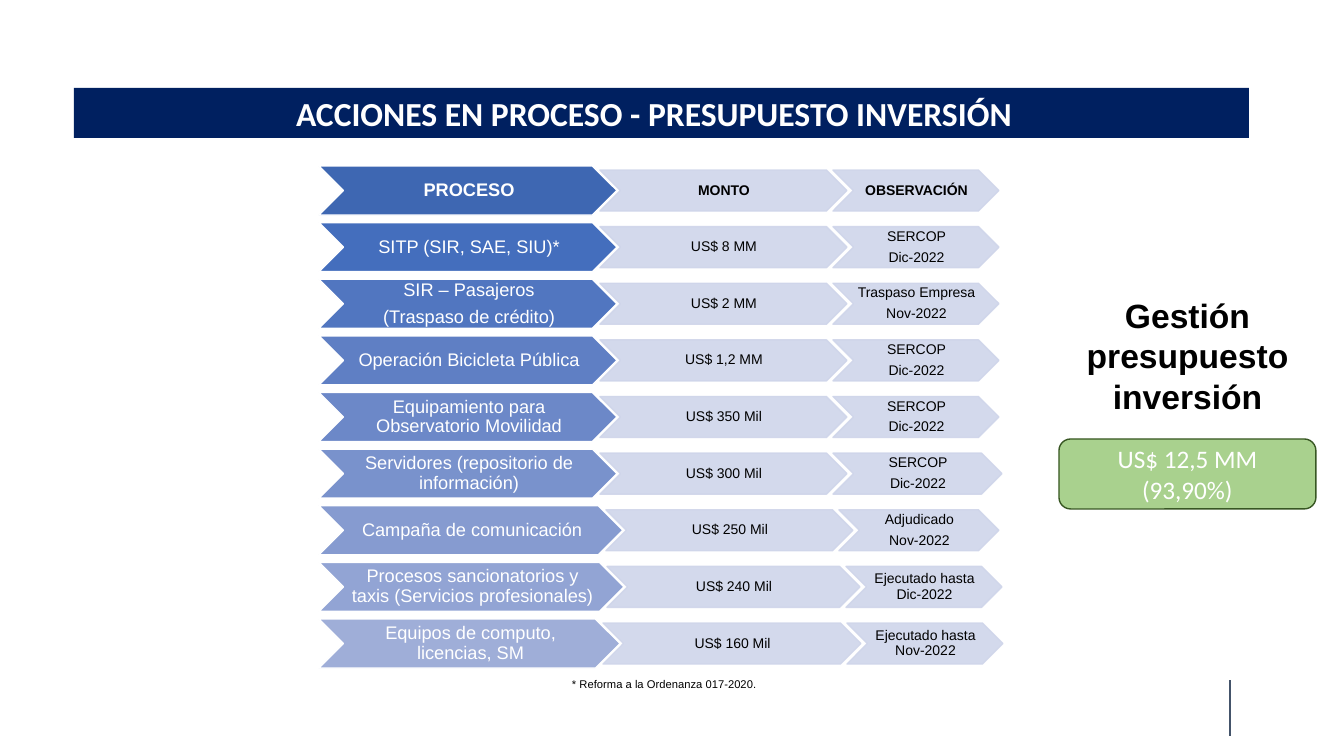
import pptx
import pptx.util
import pptx.oxml
import pptx.oxml.ns
import pptx.dml.color
import pptx.enum.shapes
import pptx.enum.text
from dataclasses import dataclass

Align = pptx.enum.text.PP_ALIGN
Anchor = pptx.enum.text.MSO_ANCHOR
Shape = pptx.enum.shapes.MSO_SHAPE

# Content: process, amount, remark; each is a tuple of paragraphs
TITLE = ("ACCIONES EN PROCESO - PRESUPUESTO INVERSIÓN",)
SUMMARY = ("Gestión presupuesto inversión",)
TOTAL = ("US$ 12,5 MM", "(93,90%)")
FOOTNOTE = ("* Reforma a la Ordenanza 017-2020.",)
ROWS = [
    (("PROCESO",), ("MONTO",), ("OBSERVACIÓN",)),
    (("SITP (SIR, SAE, SIU)*",), ("US$ 8 MM",), ("SERCOP", "Dic-2022")),
    (("SIR – Pasajeros", "(Traspaso de crédito)"), ("US$ 2 MM",),
     ("Traspaso Empresa", "Nov-2022")),
    (("Operación Bicicleta Pública",), ("US$ 1,2 MM",), ("SERCOP", "Dic-2022")),
    (("Equipamiento para Observatorio Movilidad",), ("US$ 350 Mil",),
     ("SERCOP", "Dic-2022")),
    (("Servidores (repositorio de información)",), ("US$ 300 Mil",),
     ("SERCOP", "Dic-2022")),
    (("Campaña de comunicación",), ("US$ 250 Mil",), ("Adjudicado", "Nov-2022")),
    (("Procesos sancionatorios y taxis (Servicios profesionales)",),
     ("US$ 240 Mil",), ("Ejecutado hasta Dic-2022",)),
    (("Equipos de computo, licencias, SM",), ("US$ 160 Mil",),
     ("Ejecutado hasta Nov-2022",)),
]

# Layout in px
PX = 914400 / 100.8
USUAL_WIDTHS = (298, 247, 166)
ROW_WIDTHS = {5: (298, 247, 169), 6: (304, 247, 160),
              7: (305, 253, 156), 8: (301, 258, 156)}
OVERLAPS = (17, 14, 0)
ROWS_LEFT, FIRST_TOP, LAST_TOP = 319, 166, 619
PROCESS_HEIGHT, DETAIL_HEIGHT = 49, 41


@dataclass(frozen=True)
class Theme:
    navy: str = "002060"
    white: str = "FFFFFF"
    black: str = "000000"
    detail: str = "CFD5EA"
    green: str = "A9D18E"
    green_edge: str = "385723"
    rule: str = "44546A"
    processes: tuple = ("3E67B2", "446EBD", "5176C0", "5F7FC4", "6C88C8",
                        "7992CC", "869BD0", "92A4D4", "9FAED8")
    heading_font: str = "Calibri"
    body_font: str = "Arial"
    large: int = 24
    medium: int = 18
    process: int = 13
    detail_size: int = 10
    small: int = 8


THEME = Theme()
deck = pptx.Presentation()
deck.slide_width, deck.slide_height = round(1344 * PX), round(756 * PX)
page = deck.slides.add_slide(deck.slide_layouts[6])


def px(*lengths):
    return [round(length * PX) for length in lengths]


def rgb(value):
    return pptx.dml.color.RGBColor.from_string(value)


def assign(target, values):
    for name, value in values.items():
        setattr(target, name, value)


def paint(shape, fill, edge=None, alpha=None):
    shape.shadow.inherit = False
    shape.fill.solid()
    shape.fill.fore_color.rgb = rgb(fill)
    if edge:
        shape.line.color.rgb = rgb(edge)
        shape.line.width = pptx.util.Pt(1)
    else:
        shape.line.fill.background()
    if alpha:
        for color in shape._element.spPr.iter(pptx.oxml.ns.qn("a:srgbClr")):
            opacity = color.makeelement(pptx.oxml.ns.qn("a:alpha"),
                                        {"val": str(alpha * 1000)})
            color.append(opacity)


def write(box, lines, size, color, font=THEME.body_font, bold=False,
          anchor=Anchor.MIDDLE, align=Align.CENTER, margins=(10, 5, 10, 5),
          paragraph_format=None):
    left, top, right, bottom = px(*margins)
    frame = box.text_frame
    assign(frame, {"word_wrap": True, "vertical_anchor": anchor,
                   "margin_left": left, "margin_top": top,
                   "margin_right": right, "margin_bottom": bottom})
    for index, line in enumerate(lines):
        para = frame.add_paragraph() if index else frame.paragraphs[0]
        assign(para, {"alignment": align, **(paragraph_format or {})})
        span = para.add_run()
        span.text = line
        assign(span.font, {"name": font, "size": pptx.util.Pt(size), "bold": bold})
        span.font.color.rgb = rgb(color)


# Footer rule
rule = page.shapes.add_connector(pptx.enum.shapes.MSO_CONNECTOR.STRAIGHT,
                                 *px(1230, 736, 1230, 680))
rule.line.color.rgb = rgb(THEME.rule)
rule.line.width = pptx.util.Pt(0.75)
rule._element.spPr.append(pptx.oxml.parse_xml(
    f"<a:effectLst {pptx.oxml.ns.nsdecls('a')}/>"))

# Title bar
title = page.shapes.add_shape(Shape.RECTANGLE, *px(74, 88, 1175, 50))
paint(title, THEME.navy)
write(title, TITLE, THEME.large, THEME.white, THEME.heading_font, True,
      Anchor.TOP, margins=(10, 5, 25, 5))

# Chevron rows
pitch = (LAST_TOP - FIRST_TOP) / (len(ROWS) - 1)
for row, cells in enumerate(ROWS):
    left = ROWS_LEFT
    widths = ROW_WIDTHS.get(row, USUAL_WIDTHS)
    for column, (lines, width, overlap) in enumerate(zip(cells, widths, OVERLAPS)):
        is_process = column == 0
        height = PROCESS_HEIGHT if is_process else DETAIL_HEIGHT
        top = FIRST_TOP + row * pitch + (PROCESS_HEIGHT - height) / 2
        chevron = page.shapes.add_shape(Shape.CHEVRON, *px(left, top, width, height))
        if is_process:
            paint(chevron, THEME.processes[row], THEME.white)
            size, color = THEME.process, THEME.white
        else:
            paint(chevron, THEME.detail, THEME.detail, alpha=90)
            size, color = THEME.detail_size, THEME.black
        write(chevron, lines, size, color, bold=row == 0,
              margins=(2 if is_process else 1, 1, 0, 1),
              paragraph_format={"line_spacing": 0.9,
                                "space_after": pptx.util.Pt(size * 0.4)})
        left += width - overlap

# Budget summary
total = page.shapes.add_shape(Shape.ROUNDED_RECTANGLE, *px(1059, 439, 257, 70))
paint(total, THEME.green, THEME.green_edge)
write(total, TOTAL, THEME.medium, THEME.white, THEME.heading_font)
summary = page.shapes.add_textbox(*px(1072, 290, 231, 132))
write(summary, SUMMARY, THEME.large, THEME.black, bold=True, anchor=Anchor.TOP)

# Footnote
footnote = page.shapes.add_textbox(*px(562, 672, 219, 24))
write(footnote, FOOTNOTE, THEME.small, THEME.black, anchor=Anchor.TOP,
      align=Align.JUSTIFY)

deck.save("out.pptx")
